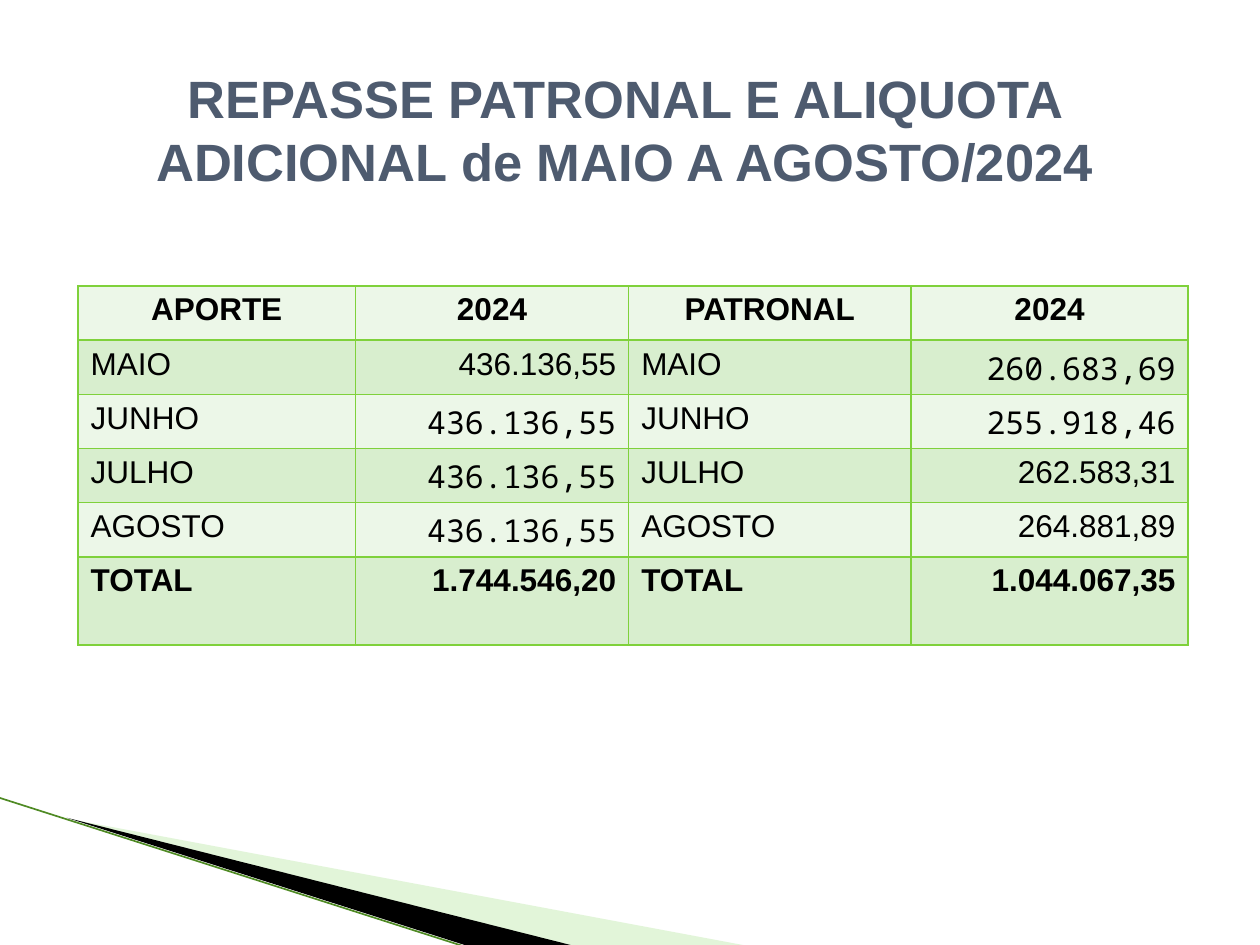
from lxml import etree
from pptx import Presentation
from pptx.dml.color import RGBColor
from pptx.enum.shapes import MSO_CONNECTOR
from pptx.enum.text import MSO_ANCHOR, PP_ALIGN
from pptx.oxml.ns import qn
from pptx.util import Inches, Pt

COLORS = {
    "title": "4E5B6F",
    "text": "000000",
    "light_row": "ECF7E8",
    "dark_row": "D8EECE",
    "border": "7FD13B",
    "pale_wedge": "B8E7A1",
    "black_wedge": "000000",
    "edge": "4F8A24",
}
SANS, MONO = "Arial", "Noto Sans Mono"

TITLE = "REPASSE PATRONAL E ALIQUOTA ADICIONAL de MAIO A AGOSTO/2024"
ROWS = [
    ("APORTE", "2024", "PATRONAL", "2024"),
    ("MAIO", "436.136,55", "MAIO", "260.683,69"),
    ("JUNHO", "436.136,55", "JUNHO", "255.918,46"),
    ("JULHO", "436.136,55", "JULHO", "262.583,31"),
    ("AGOSTO", "436.136,55", "AGOSTO", "264.881,89"),
    ("TOTAL", "1.744.546,20", "TOTAL", "1.044.067,35"),
]
MONO_CELLS = {(1, 3), (2, 1), (2, 3), (3, 1), (4, 1)}
COLUMN_WIDTHS = [2.2, 2.17, 2.24, 2.2]
ROW_HEIGHTS = [0.43] * 5 + [0.7]

# color, opacity in percent, corners
WEDGES = [
    ("pale_wedge", 40, [(0.55, 6.5), (5.95, 7.51), (4.56, 7.51)]),
    ("black_wedge", 100, [(0.53, 6.49), (4.57, 7.51), (3.72, 7.51)]),
]
EDGE = (-0.01, 6.33, 3.71, 7.52)


def rgb(name):
    return RGBColor.from_string(COLORS[name])


def set_font(para, size, color, bold, name=SANS):
    font = para.font
    font.size, font.bold, font.name = Pt(size), bold, name
    font.color.rgb = rgb(color)


def add_wedge(page, color, opacity, corners):
    points = [(Inches(x), Inches(y)) for x, y in corners]
    builder = page.shapes.build_freeform(*points[0], scale=1.0)
    builder.add_line_segments(points[1:], close=True)
    wedge = builder.convert_to_shape()
    wedge.shadow.inherit = False
    wedge.fill.solid()
    wedge.fill.fore_color.rgb = rgb(color)
    wedge.line.fill.background()
    if opacity < 100:
        tint = next(wedge.element.spPr.iter(qn("a:srgbClr")))
        etree.SubElement(tint, qn("a:alpha"), val=str(opacity * 1000))


def add_edge(page):
    edge = page.shapes.add_connector(
        MSO_CONNECTOR.STRAIGHT, *(Inches(value) for value in EDGE))
    edge.line.color.rgb = rgb("edge")
    edge.line.width = Pt(0.95)
    etree.SubElement(edge.element.spPr, qn("a:effectLst"))


def add_title(page):
    box = page.shapes.add_textbox(
        Inches(0.86), Inches(0.47), Inches(8.2), Inches(1.11))
    frame = box.text_frame
    frame.word_wrap = True
    frame.vertical_anchor = MSO_ANCHOR.MIDDLE
    para = frame.paragraphs[0]
    para.text = TITLE
    para.alignment = PP_ALIGN.CENTER
    set_font(para, 30, "title", True)


def set_borders(cell):
    """Put a line on all four sides; borders must precede the fill."""
    properties = cell._tc.get_or_add_tcPr()
    for index, side in enumerate(("lnL", "lnR", "lnT", "lnB")):
        line = etree.Element(qn(f"a:{side}"), w=str(Pt(1)))
        fill = etree.SubElement(line, qn("a:solidFill"))
        etree.SubElement(fill, qn("a:srgbClr"), val=COLORS["border"])
        properties.insert(index, line)


def add_table(page):
    table = page.shapes.add_table(
        len(ROWS), len(COLUMN_WIDTHS), Inches(0.62), Inches(2.27),
        Inches(sum(COLUMN_WIDTHS)), Inches(sum(ROW_HEIGHTS))).table
    for column, width in zip(table.columns, COLUMN_WIDTHS):
        column.width = Inches(width)
    for row, height in zip(table.rows, ROW_HEIGHTS):
        row.height = Inches(height)
    for r, values in enumerate(ROWS):
        for c, value in enumerate(values):
            cell = table.cell(r, c)
            cell.fill.solid()
            cell.fill.fore_color.rgb = rgb("dark_row" if r % 2 else "light_row")
            set_borders(cell)
            para = cell.text_frame.paragraphs[0]
            para.text = value
            if r == 0:
                para.alignment = PP_ALIGN.CENTER
            else:
                para.alignment = PP_ALIGN.RIGHT if c % 2 else PP_ALIGN.LEFT
            set_font(para, 18, "text", r in (0, len(ROWS) - 1),
                     MONO if (r, c) in MONO_CELLS else SANS)


def main():
    deck = Presentation()
    deck.slide_width, deck.slide_height = Inches(10), Inches(7.5)
    page = deck.slides.add_slide(deck.slide_layouts[6])
    for wedge in WEDGES:
        add_wedge(page, *wedge)
    add_edge(page)
    add_title(page)
    add_table(page)
    deck.save("out.pptx")


if __name__ == "__main__":
    main()
